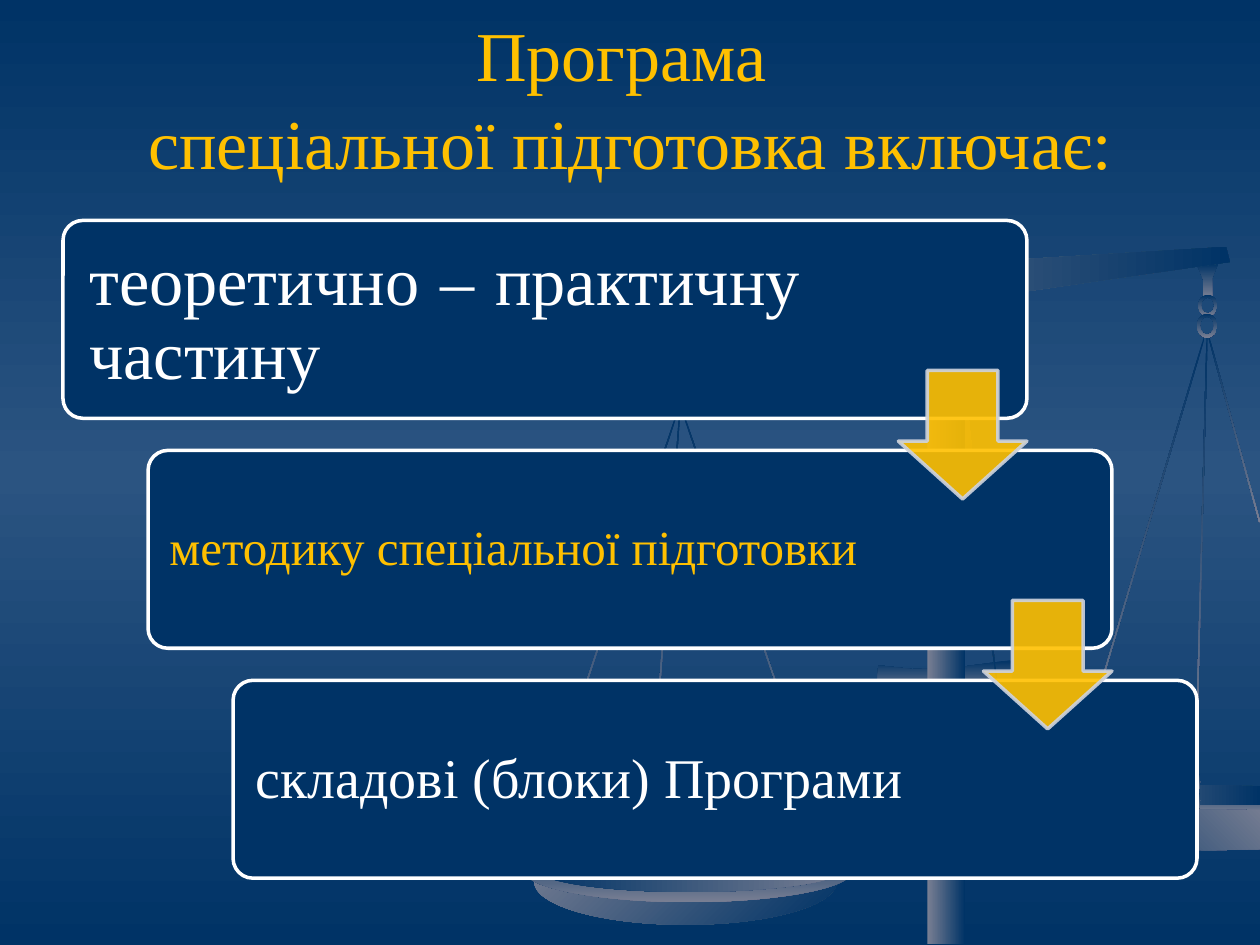
"""Build a slide with three stepped boxes over a faint pair of scales."""
from copy import deepcopy
from dataclasses import dataclass

from lxml import etree
from pptx import Presentation
from pptx.dml.color import RGBColor
from pptx.enum.shapes import MSO_SHAPE
from pptx.enum.text import MSO_ANCHOR, PP_ALIGN
from pptx.oxml.ns import qn
from pptx.util import Inches, Pt

RECT, OVAL, RING = MSO_SHAPE.RECTANGLE, MSO_SHAPE.OVAL, MSO_SHAPE.DONUT
ROUND, ARROW = MSO_SHAPE.ROUNDED_RECTANGLE, MSO_SHAPE.DOWN_ARROW
LEFT, CENTER, JUSTIFY = PP_ALIGN.LEFT, PP_ALIGN.CENTER, PP_ALIGN.JUSTIFY
MIDDLE = MSO_ANCHOR.MIDDLE


@dataclass
class Theme:
    font: str = "Times New Roman"
    navy: RGBColor = RGBColor(0x00, 0x33, 0x66)
    blue: RGBColor = RGBColor(0x2B, 0x54, 0x81)
    gray: RGBColor = RGBColor(0x79, 0x7F, 0x93)
    gold: RGBColor = RGBColor(0xFF, 0xC0, 0x00)
    pale: RGBColor = RGBColor(0xCE, 0xD3, 0xDE)
    white: RGBColor = RGBColor(0xFF, 0xFF, 0xFF)
    head: int = 40
    large: int = 39
    mid: int = 32
    small: int = 28


theme = Theme()
deck = Presentation()
deck.slide_width, deck.slide_height = Inches(10), Inches(7.5)
slide = deck.slides.add_slide(deck.slide_layouts[6])
shapes = slide.shapes


def shade(shape, first, last, angle):
    shape.shadow.inherit = False
    shape.line.fill.background()
    shape.fill.gradient()
    shape.fill.gradient_angle = -angle % 360
    for stop, color in zip(shape.fill.gradient_stops, (first, last)):
        stop.color.rgb = color


def write(text, place, size, color, align, inset, pitch):
    box = shapes.add_textbox(*map(Inches, place))
    frame = box.text_frame
    frame.word_wrap = True
    frame.vertical_anchor = MIDDLE
    frame.margin_left = frame.margin_right = Inches(inset)
    frame.margin_top = frame.margin_bottom = Inches(inset)
    para = frame.paragraphs[0]
    para.text = text
    para.alignment = align
    para.line_spacing = pitch
    para.font.name = theme.font
    para.font.size = Pt(size)
    para.font.color.rgb = color


back = slide.background.fill
back.gradient()
back.gradient_angle = 270
for stop in back.gradient_stops:
    stop.color.rgb = theme.navy
stops = slide.element.find(".//" + qn("a:gsLst"))
stops.insert(1, deepcopy(stops[0]))
center = back.gradient_stops[1]
center.position = 0.5
center.color.rgb = theme.blue

cords = [
    (9.04, 2.6, 3.6, 16.6), (9.53, 2.66, 3.47, 1.5), (9.79, 2.64, 1.53, 344.6),
    (5.98, 3.15, 3.53, 341), (4.79, 3.16, 3.68, 18.6), (5.27, 3.25, 3.31, 4.2),
]
for left, top, height, turn in cords:
    cord = shapes.add_shape(RECT, *map(Inches, (left, top, 0.01, height)))
    cord.rotation = turn
    shade(cord, theme.navy, theme.gray, 90)

collar = [(6.97, 5.28), (7.24, 5.31), (7.57, 5.3), (8.02, 5.24), (8.04, 5.44),
          (7.68, 5.51), (7.33, 5.52), (6.96, 5.47)]
rim = [(9.58, 6.24), (8.85, 6.23), (8.46, 6.24), (8.27, 6.28), (8.37, 6.34),
       (8.63, 6.39), (9.14, 6.44), (9.58, 6.45), (10, 6.45), (10, 6.26)]
bowl = [(8.31, 6.33), (8.42, 6.49), (8.65, 6.63), (9.03, 6.72), (9.57, 6.75),
        (10, 6.74), (10, 6.43), (9.18, 6.42), (8.57, 6.37)]
plate = [(9.56, 6.23), (8.69, 6.23), (8.34, 6.28), (8.52, 6.33), (8.93, 6.37),
         (9.55, 6.39), (10, 6.39), (10, 6.24)]
hook = [(9.67, 2.09), (9.5, 2.1), (9.55, 2.22), (9.55, 2.36), (9.62, 2.36), (9.62, 2.21)]
beam = [(9.73, 1.96), (9.76, 2.08), (5.25, 2.73), (5.24, 2.64), (7.37, 2.12), (7.59, 2.09)]
brace = [(7.91, 5.39), (7.5, 2.8), (7.48, 2.68), (7.6, 2.65), (7.63, 2.77)]
outlines = [
    (collar, theme.navy, theme.gray, 90), (rim, theme.navy, theme.gray, 90),
    (bowl, theme.navy, theme.gray, 315), (plate, theme.gray, theme.navy, 0),
    (hook, theme.navy, theme.gray, 90), (beam, theme.gray, theme.navy, 0),
    (brace, theme.gray, theme.navy, 45),
]
for points, first, last, angle in outlines:
    spots = [(Inches(x), Inches(y)) for x, y in points]
    pen = shapes.build_freeform(*spots[0])
    pen.add_line_segments(spots[1:], close=True)
    shade(pen.convert_to_shape(), first, last, angle)

for place in [(9.51, 2.34, 0.15, 0.17), (9.5, 2.49, 0.16, 0.19),
              (9.42, 6.12, 0.11, 0.17), (9.41, 6.26, 0.12, 0.19)]:
    ring = shapes.add_shape(RING, *map(Inches, place))
    ring.adjustments[0] = 0.15
    shade(ring, theme.navy, theme.gray, 90)

parts = [
    (OVAL, (4.24, 6.66, 2.4, 0.68), theme.gray, theme.navy, 45),
    (OVAL, (4.16, 6.66, 2.61, 0.5), theme.navy, theme.gray, 90),
    (OVAL, (4.24, 6.7, 2.47, 0.38), theme.navy, theme.gray, 0),
    (RECT, (7.36, 3.08, 0.3, 4.41), theme.gray, theme.navy, 0),
]
for kind, place, first, last, angle in parts:
    shade(shapes.add_shape(kind, *map(Inches, place)), first, last, angle)

write("Програма \vспеціальної підготовка включає:", (0.5, 0.13, 9, 1.26),
      theme.head, theme.gold, CENTER, 0.05, 1.05)

steps = [
    ("теоретично – практичну частину", 5.96, theme.large, theme.white, JUSTIFY, 0.16),
    ("методику спеціальної підготовки", 5.86, theme.small, theme.gold, LEFT, 0.12),
    ("складові (блоки) Програми", 5.86, theme.mid, theme.white, LEFT, 0.13),
]
shift, drop = 0.675, 1.825
for i, (text, width, size, color, align, inset) in enumerate(steps):
    left, top = 0.5 + shift * i, 1.75 + drop * i
    card = shapes.add_shape(ROUND, *map(Inches, (left, top, 7.65, 1.57)))
    card.adjustments[0] = 0.1
    card.shadow.inherit = False
    card.fill.solid()
    card.fill.fore_color.rgb = theme.navy
    card.line.color.rgb = theme.white
    card.line.width = Pt(2)
    place = (left + 0.05, top + 0.05, width, 1.48)
    write(text, place, size, color, align, inset, 0.9)

for i in range(len(steps) - 1):
    place = (7.13 + shift * i, 2.94 + drop * i, 1.02, 1.02)
    arrow = shapes.add_shape(ARROW, *map(Inches, place))
    arrow.adjustments[0], arrow.adjustments[1] = 0.55, 0.45
    arrow.shadow.inherit = False
    arrow.fill.solid()
    arrow.fill.fore_color.rgb = theme.gold
    arrow.line.color.rgb = theme.pale
    arrow.line.width = Pt(2)
    for tint in arrow.element.spPr.iter(qn("a:srgbClr")):
        etree.SubElement(tint, qn("a:alpha")).set("val", "90000")

deck.save("out.pptx")
